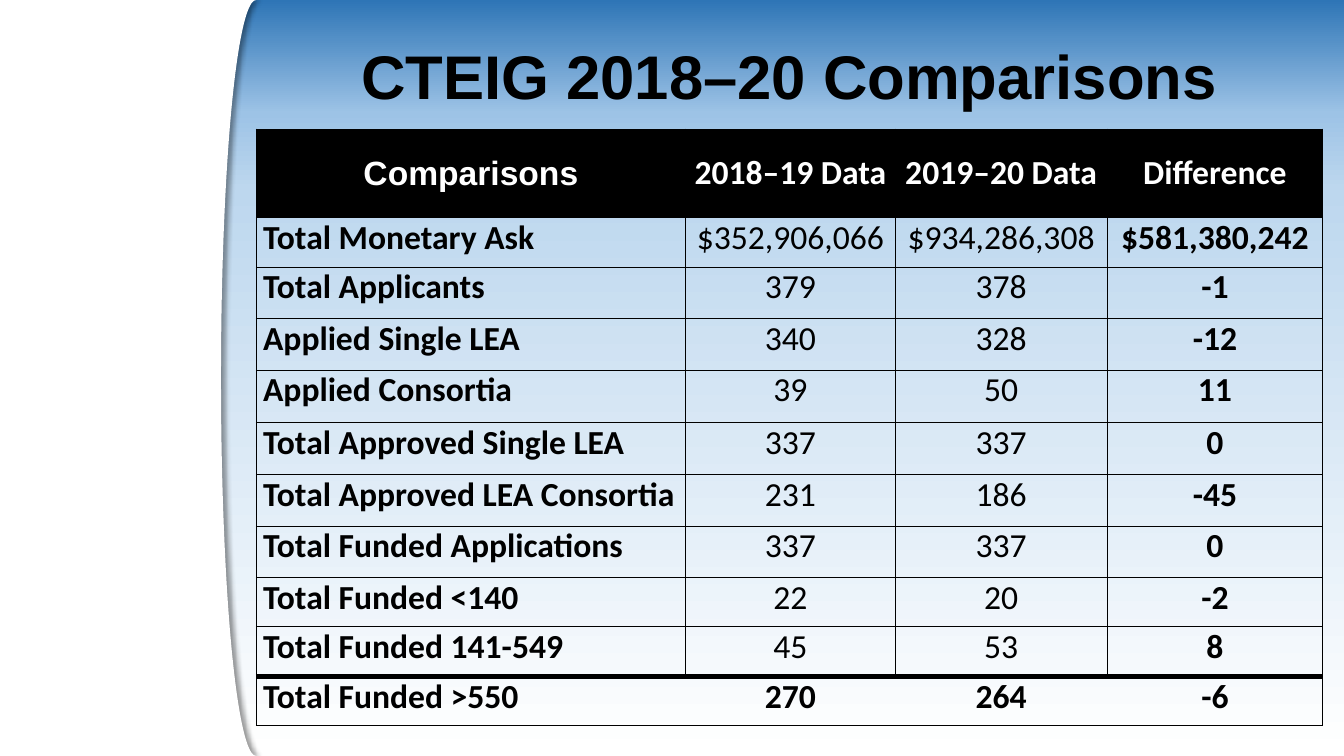
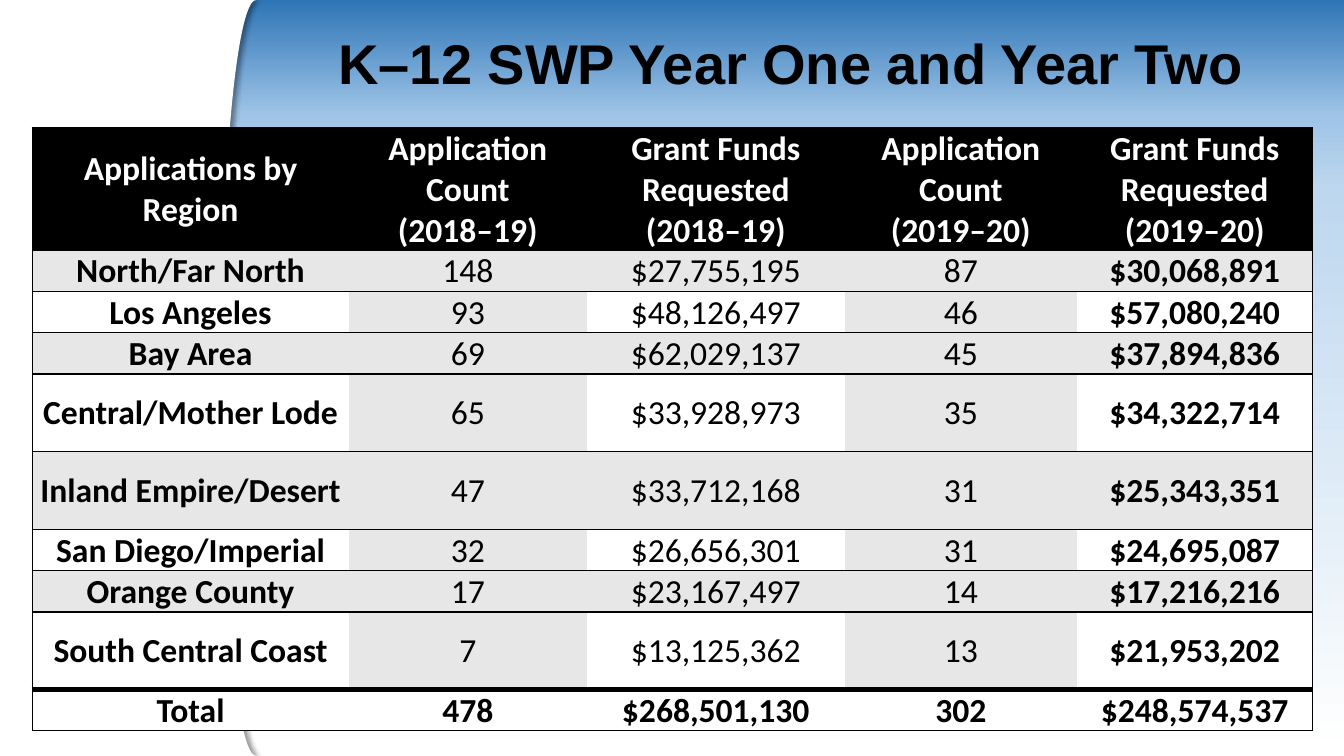
from pptx import Presentation
from pptx.dml.color import RGBColor
from pptx.enum.shapes import MSO_SHAPE
from pptx.enum.text import MSO_ANCHOR, PP_ALIGN
from pptx.oxml import parse_xml
from pptx.oxml.ns import nsdecls, qn
from pptx.util import Inches, Pt

CENTER, LEFT = PP_ALIGN.CENTER, PP_ALIGN.LEFT
MIDDLE, TOP = MSO_ANCHOR.MIDDLE, MSO_ANCHOR.TOP
CURVE, RECT = MSO_SHAPE.FLOWCHART_STORED_DATA, MSO_SHAPE.RECTANGLE

# Shared style
WIDTH, HEIGHT = 13.33, 7.5
BLACK, WHITE, GREY = "000000", "FFFFFF", "E7E7E7"
SKY = [(0, "2E75B6"), (15, "9DC3E6"), (25, "BDD7EE"), (100, WHITE)]
TITLE_FONT, BODY_FONT, BODY_SIZE = "Arial", "Calibri", 24
TOTAL_RULE = 4

# Content
GRANT_ROWS = [
    ("Comparisons", "2018–19 Data", "2019–20 Data", "Difference"),
    ("Total Monetary Ask", "$352,906,066", "$934,286,308", "$581,380,242"),
    ("Total Applicants", "379", "378", "-1"),
    ("Applied Single LEA", "340", "328", "-12"),
    ("Applied Consortia", "39", "50", "11"),
    ("Total Approved Single LEA", "337", "337", "0"),
    ("Total Approved LEA Consortia", "231", "186", "-45"),
    ("Total Funded Applications", "337", "337", "0"),
    ("Total Funded <140", "22", "20", "-2"),
    ("Total Funded 141-549", "45", "53", "8"),
    ("Total Funded >550", "270", "264", "-6"),
]
REGION_ROWS = [
    ("Applications by\nRegion",
     "Application\nCount\v(2018–19)", "Grant Funds\nRequested\v(2018–19)",
     "Application\nCount\v(2019–20)", "Grant Funds\nRequested\v(2019–20)"),
    ("North/Far North", "148", "$27,755,195", "87", "$30,068,891"),
    ("Los Angeles", "93", "$48,126,497", "46", "$57,080,240"),
    ("Bay Area", "69", "$62,029,137", "45", "$37,894,836"),
    ("Central/Mother Lode", "65", "$33,928,973", "35", "$34,322,714"),
    ("Inland Empire/Desert", "47", "$33,712,168", "31", "$25,343,351"),
    ("San Diego/Imperial", "32", "$26,656,301", "31", "$24,695,087"),
    ("Orange County", "17", "$23,167,497", "14", "$17,216,216"),
    ("South Central Coast", "7", "$13,125,362", "13", "$21,953,202"),
    ("Total", "478", "$268,501,130", "302", "$248,574,537"),
]
SLIDES = [
    dict(title="CTEIG 2018–20 Comparisons", title_size=44,
         title_box=(2.54, 0.21, 10.58, 1.15), rows=GRANT_ROWS,
         corner=(2.54, 1.28), columns=[4.26, 2.08, 2.1, 2.14],
         heights=[0.88, 0.49, 0.51, 0.51, 0.52, 0.52, 0.51, 0.51, 0.49, 0.49, 0.49],
         margins=(0.07, 0, 0.07, 0), rule=0.5, inner_rule=0.5, banded=False,
         label_align=LEFT, body_anchor=TOP, corner_font=TITLE_FONT),
    dict(title="K–12 SWP Year One and Year Two", title_size=40,
         title_box=(2.55, 0.21, 10.58, 0.9), rows=REGION_ROWS,
         corner=(0.32, 1.27), columns=[3.14, 2.36, 2.56, 2.3, 2.34],
         heights=[1.15, 0.39, 0.39, 0.39, 0.77, 0.77, 0.39, 0.39, 0.77, 0.39],
         margins=(0.01, 0.01, 0.01, 0), rule=1, inner_rule=0, banded=True,
         label_align=CENTER, body_anchor=MIDDLE, corner_font=BODY_FONT),
]


def color(value):
    return RGBColor.from_string(value)


def inches(values):
    return [Inches(value) for value in values]


def set_all(target, values):
    for name, value in values.items():
        setattr(target, name, value)


def style_text(frame, size, name, ink, bold, align, spacing=None):
    for paragraph in frame.paragraphs:
        set_all(paragraph, dict(alignment=align, line_spacing=spacing))
        for run in paragraph.runs:
            set_all(run.font, dict(size=Pt(size), name=name, bold=bold))
            run.font.color.rgb = color(ink)


def paint_background(master):
    fill = master.background.fill
    fill.gradient()
    fill.gradient_angle = 270
    stops = master.element.find(".//" + qn("a:gsLst"))
    for stop in list(stops):
        stops.remove(stop)
    for share, shade in SKY:
        stops.append(parse_xml(
            f'<a:gs {nsdecls("a")} pos="{share * 1000}"><a:srgbClr val="{shade}"/></a:gs>'))


def add_side_panel(slide):
    for preset, box in ((CURVE, (0.45, 0, 2.09, HEIGHT)), (RECT, (0, 0, 1.16, HEIGHT))):
        panel = slide.shapes.add_shape(preset, *inches(box))
        panel.shadow.inherit = False
        panel.fill.solid()
        panel.fill.fore_color.rgb = color(WHITE)
        panel.line.fill.background()
        if preset == CURVE:
            effects = panel.element.spPr.find(qn("a:effectLst"))
            effects.append(parse_xml(
                f'<a:outerShdw {nsdecls("a")} blurRad="{Pt(4)}" dist="{Pt(3)}" dir="0" '
                f'algn="l" rotWithShape="0"><a:srgbClr val="{BLACK}">'
                '<a:alpha val="40000"/></a:srgbClr></a:outerShdw>'))


def add_title(slide, content):
    frame = slide.shapes.add_textbox(*inches(content["title_box"])).text_frame
    set_all(frame, dict(word_wrap=True, vertical_anchor=MIDDLE, text=content["title"]))
    style_text(frame, content["title_size"], TITLE_FONT, BLACK, True, CENTER, 0.9)


def set_borders(cell, widths):
    # Schema order: left, right, top, bottom
    for side, width in zip("LRTB", widths):
        paint = f'<a:solidFill><a:srgbClr val="{BLACK}"/></a:solidFill>' if width else "<a:noFill/>"
        cell._tc.get_or_add_tcPr().append(parse_xml(
            f'<a:ln{side} {nsdecls("a")} w="{Pt(width)}">{paint}</a:ln{side}>'))


def add_comparison_table(slide, content):
    rows, columns, heights = content["rows"], content["columns"], content["heights"]
    last_row, last_col = len(rows) - 1, len(columns) - 1
    box = inches((*content["corner"], sum(columns), sum(heights)))
    table = slide.shapes.add_table(len(rows), len(columns), *box).table
    set_all(table, dict(first_row=False, horz_banding=False))
    for column, width in zip(table.columns, columns):
        column.width = Inches(width)
    for row, height in zip(table.rows, heights):
        row.height = Inches(height)

    margin_names = ("margin_left", "margin_top", "margin_right", "margin_bottom")
    margins = dict(zip(margin_names, inches(content["margins"])))
    rule = content["rule"]
    for r, values in enumerate(rows):
        header, total = r == 0, r == last_row
        inner = 0 if total else content["inner_rule"]
        for c, value in enumerate(values):
            cell = table.cell(r, c)
            cell.text_frame.text = value
            set_all(cell, margins)
            cell.vertical_anchor = MIDDLE if header else content["body_anchor"]
            style_text(cell.text_frame, BODY_SIZE,
                       content["corner_font"] if header and c == 0 else BODY_FONT,
                       WHITE if header else BLACK,
                       header or total or c in (0, last_col),
                       content["label_align"] if c == 0 and not header else CENTER)
            set_borders(cell, (rule if c == 0 else inner,
                               rule if c == last_col else inner,
                               TOTAL_RULE if total else rule,
                               TOTAL_RULE if r == last_row - 1 else rule))
            # Header is black; bands mark odd rows and odd columns
            if header or content["banded"]:
                band = GREY if not total and (r % 2 or c % 2) else WHITE
                cell.fill.solid()
                cell.fill.fore_color.rgb = color(BLACK if header else band)
            else:
                cell.fill.background()


def main():
    deck = Presentation()
    set_all(deck, dict(slide_width=Inches(WIDTH), slide_height=Inches(HEIGHT)))
    paint_background(deck.slide_master)
    for content in SLIDES:
        slide = deck.slides.add_slide(deck.slide_layouts[6])
        add_side_panel(slide)
        add_title(slide, content)
        add_comparison_table(slide, content)
    deck.save("out.pptx")


if __name__ == "__main__":
    main()
